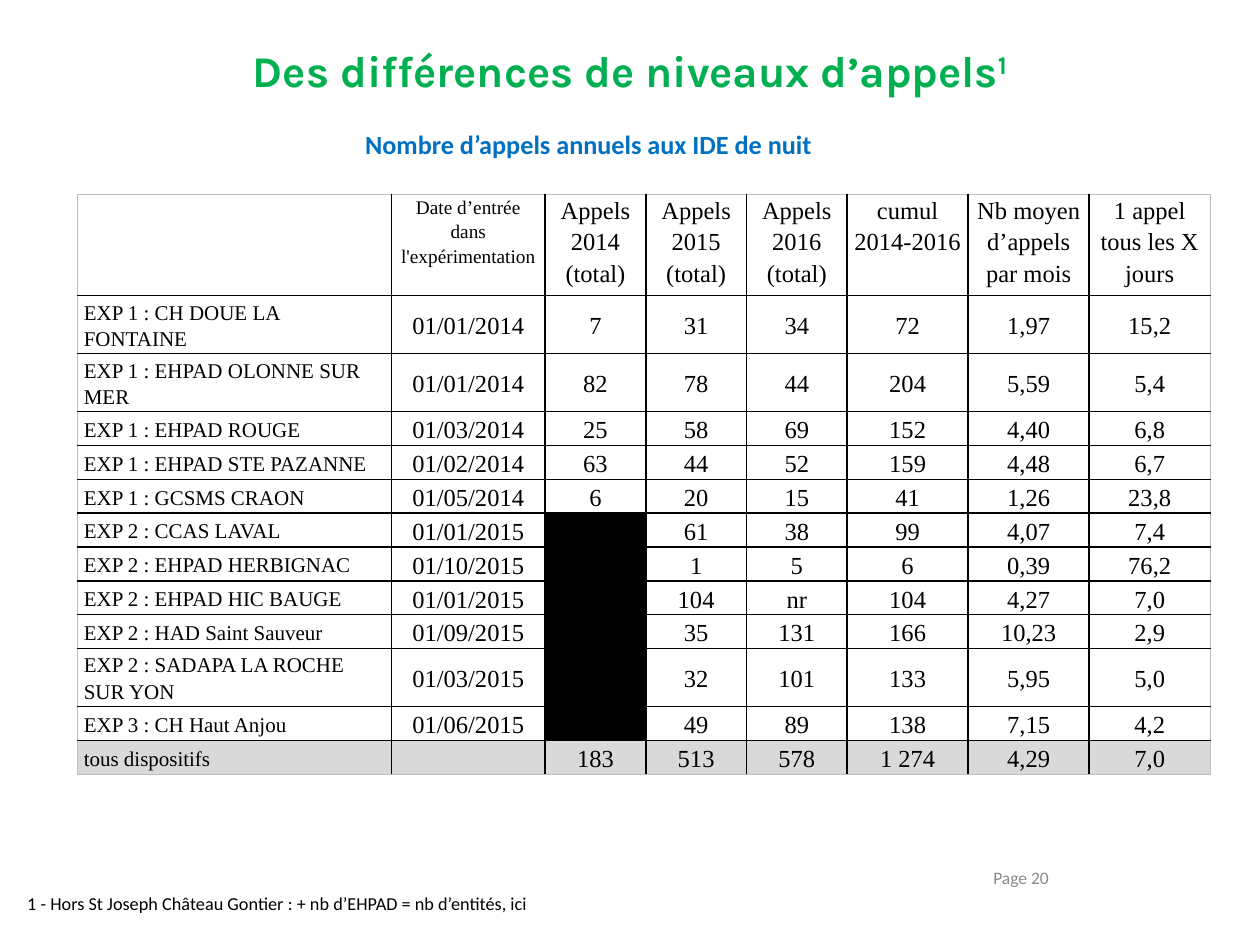
from pptx import Presentation
from pptx.dml.color import RGBColor
from pptx.enum.shapes import MSO_SHAPE as Preset
from pptx.enum.text import MSO_ANCHOR as Anchor, MSO_AUTO_SIZE as AutoSize, PP_ALIGN as Align
from pptx.oxml.ns import qn
from pptx.util import Cm, Pt
from lxml.etree import SubElement

BLACK = RGBColor(0, 0, 0)
WHITE = RGBColor(0xFF, 0xFF, 0xFF)
GREEN = RGBColor(0, 0xB0, 0x50)
BLUE = RGBColor(0, 0x70, 0xC0)
PAGE_GREY = RGBColor(0x89, 0x89, 0x89)
TOTAL_GREY = RGBColor(0xD9, 0xD9, 0xD9)
EDGE_GREY = RGBColor(0xBF, 0xBF, 0xBF)

COLUMN_WIDTHS = [6.32, 3.1, 2.03, 2.03, 2.03, 2.44, 2.44, 2.44]
HEADER_HEIGHT, TALL_HEIGHT, ROW_HEIGHT = 2.05, 1.17, 0.68
TALL_ROWS = (1, 2, 10)
CALLS = [
    ["", "Date d’entrée dans l'expérimentation", "Appels 2014\v(total)", "Appels 2015\v(total)",
     "Appels 2016\v(total)", "cumul\n2014-2016", "Nb moyen d’appels par mois",
     "1 appel tous les X jours"],
    ["EXP 1 : CH DOUE LA FONTAINE", "01/01/2014", "7", "31", "34", "72", "1,97", "15,2"],
    ["EXP 1 : EHPAD OLONNE SUR MER", "01/01/2014", "82", "78", "44", "204", "5,59", "5,4"],
    ["EXP 1 : EHPAD ROUGE", "01/03/2014", "25", "58", "69", "152", "4,40", "6,8"],
    ["EXP 1 : EHPAD STE PAZANNE", "01/02/2014", "63", "44", "52", "159", "4,48", "6,7"],
    ["EXP 1 : GCSMS CRAON", "01/05/2014", "6", "20", "15", "41", "1,26", "23,8"],
    ["EXP 2 : CCAS LAVAL", "01/01/2015", "", "61", "38", "99", "4,07", "7,4"],
    ["EXP 2 : EHPAD HERBIGNAC", "01/10/2015", "", "1", "5", "6", "0,39", "76,2"],
    ["EXP 2 : EHPAD HIC BAUGE", "01/01/2015", "", "104", "nr", "104", "4,27", "7,0"],
    ["EXP 2 : HAD Saint Sauveur", "01/09/2015", "", "35", "131", "166", "10,23", "2,9"],
    ["EXP 2 : SADAPA LA ROCHE SUR YON", "01/03/2015", "", "32", "101", "133", "5,95", "5,0"],
    ["EXP 3 : CH Haut Anjou", "01/06/2015", "", "49", "89", "138", "7,15", "4,2"],
    ["tous dispositifs", "", "183", "513", "578", "1 274", "4,29", "7,0"],
]


def format_run(run, size, font, color, bold, raised):
    run.font.size = Pt(size)
    run.font.name = font
    run.font.color.rgb = color
    run.font.bold = bold
    if raised:
        run.font._element.set("baseline", "30000")


def write(frame, text, *, size, font="Calibri", color=BLACK, bold=False, raised=False,
          align=Align.LEFT, spacing=None, note_mark=None):
    frame.text = text
    for paragraph in frame.paragraphs:
        paragraph.alignment = align
        paragraph.line_spacing = spacing
        for run in paragraph.runs:
            format_run(run, size, font, color, bold, raised)
        if not paragraph.runs:
            SubElement(paragraph._p, qn("a:endParaRPr"), sz=str(size * 100))
    if note_mark:
        mark = frame.paragraphs[-1].add_run()
        mark.text = note_mark
        format_run(mark, size, font, color, bold, True)


def add_title(slide, text, **style):
    title = slide.shapes.title
    title.left, title.top, title.width, title.height = Cm(1.27), Cm(0.76), Cm(22.86), Cm(0.76)
    title.text_frame.vertical_anchor = Anchor.TOP
    title.text_frame.auto_size = AutoSize.NONE
    write(title.text_frame, text, **style)


def add_label(slide, box, text, wrap=False, anchor=Anchor.TOP, **style):
    frame = slide.shapes.add_textbox(*map(Cm, box)).text_frame
    frame.word_wrap = wrap
    frame.vertical_anchor = anchor
    write(frame, text, **style)


def add_footnote(slide, box, text, **style):
    footnote = slide.shapes.add_shape(Preset.RECTANGLE, *map(Cm, box))
    footnote.shadow.inherit = False
    footnote.fill.solid()
    footnote.fill.fore_color.rgb = WHITE
    footnote.line.fill.background()
    footnote.text_frame.word_wrap = False
    footnote.text_frame.vertical_anchor = Anchor.MIDDLE
    write(footnote.text_frame, text, **style)


def set_borders(cell, outer_sides):
    properties = cell._tc.get_or_add_tcPr()
    for position, side in enumerate(("lnL", "lnR", "lnT", "lnB")):
        outer = side in outer_sides
        border = properties.makeelement(qn(f"a:{side}"), {"w": str(Pt(0.5 if outer else 1))})
        fill = SubElement(border, qn("a:solidFill"))
        SubElement(fill, qn("a:srgbClr"), val=str(EDGE_GREY if outer else BLACK))
        properties.insert(position, border)


def cell_fill(row, column, text):
    if row == len(CALLS) - 1:
        return TOTAL_GREY
    return BLACK if column == 2 and not text else WHITE


def cell_size(row, column):
    if column == 0:
        return 12
    return 11 if (row, column) == (0, 1) else 14


def row_height(row):
    if row == 0:
        return HEADER_HEIGHT
    return TALL_HEIGHT if row in TALL_ROWS else ROW_HEIGHT


def add_calls_table(slide):
    last_row, last_column = len(CALLS) - 1, len(COLUMN_WIDTHS) - 1
    heights = [row_height(row) for row in range(len(CALLS))]
    table = slide.shapes.add_table(len(CALLS), len(COLUMN_WIDTHS), Cm(1.57), Cm(3.91),
                                   Cm(sum(COLUMN_WIDTHS)), Cm(sum(heights))).table
    table.first_row = table.horz_banding = False
    for column, width in zip(table.columns, COLUMN_WIDTHS):
        column.width = Cm(width)
    for r, values in enumerate(CALLS):
        table.rows[r].height = Cm(heights[r])
        for c, text in enumerate(values):
            cell = table.cell(r, c)
            cell.margin_left = cell.margin_right = Cm(0.12)
            cell.margin_top = cell.margin_bottom = 0
            cell.vertical_anchor = Anchor.MIDDLE if r else Anchor.TOP
            cell.fill.solid()
            cell.fill.fore_color.rgb = cell_fill(r, c, text)
            write(cell.text_frame, text, size=cell_size(r, c), font="Times New Roman",
                  align=Align.CENTER if c else Align.LEFT, spacing=1.15)
            edges = {"lnL": c == 0, "lnR": c == last_column, "lnT": r == 0, "lnB": r == last_row}
            set_borders(cell, [side for side, outer in edges.items() if outer])


def main():
    deck = Presentation()
    deck.slide_width, deck.slide_height = Cm(25.4), Cm(19.05)
    slide = deck.slides.add_slide(deck.slide_layouts[5])
    add_label(slide, (18.49, 17.32, 2.9, 0.74), "Page 20", wrap=True, anchor=Anchor.MIDDLE,
              size=10, color=PAGE_GREY, align=Align.RIGHT)
    add_title(slide, "Des différences de niveaux d’appels", size=25, font="Karla",
              color=GREEN, bold=True, align=Align.CENTER, note_mark="1")
    add_label(slide, (7.11, 2.46, 9.58, 0.89), "Nombre d’appels annuels aux IDE de nuit",
              size=15, color=BLUE, bold=True)
    add_calls_table(slide)
    add_footnote(slide, (0.3, 17.91, 12.14, 0.76),
                 "1 - Hors St Joseph Château Gontier : + nb d’EHPAD = nb d’entités, ici",
                 size=18, raised=True)
    deck.save("out.pptx")


if __name__ == "__main__":
    main()
